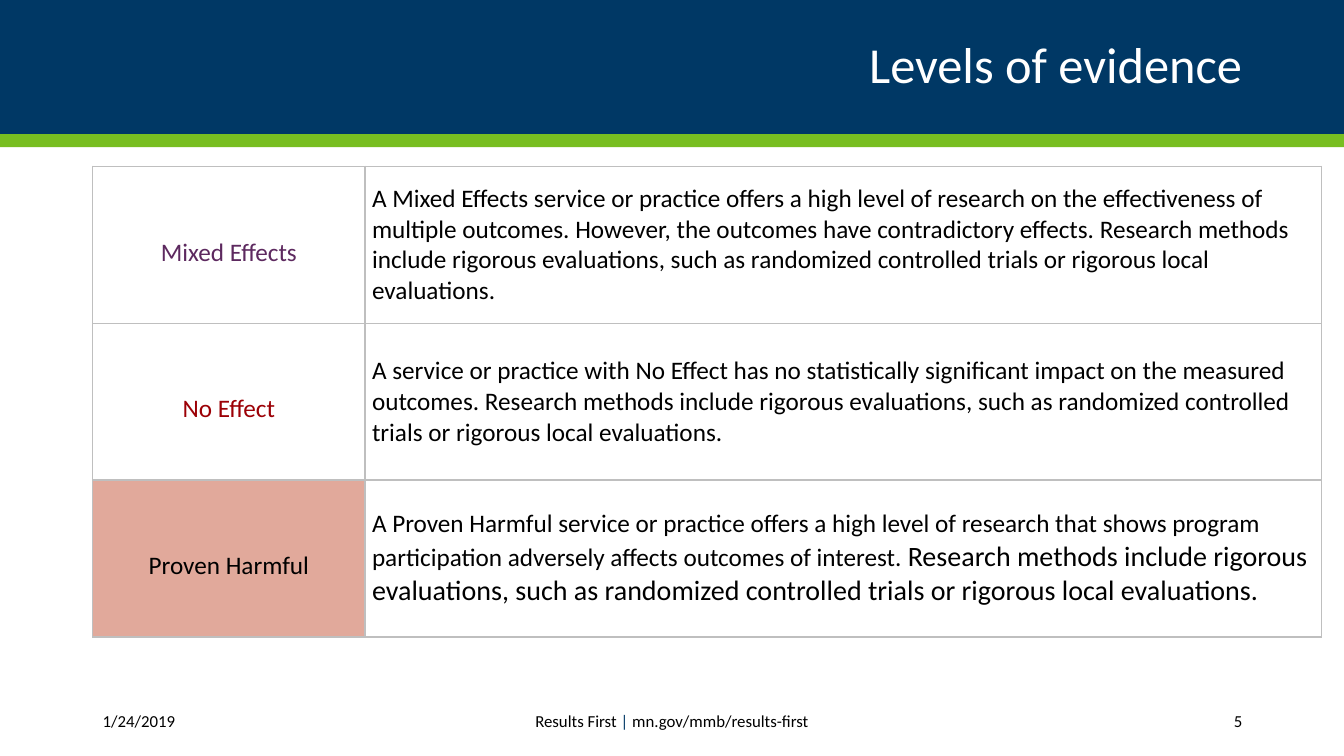
from pptx import Presentation
from pptx.dml.color import RGBColor
from pptx.enum.shapes import MSO_SHAPE
from pptx.enum.text import MSO_ANCHOR, PP_ALIGN
from pptx.oxml import parse_xml
from pptx.oxml.ns import nsdecls
from pptx.util import Inches, Pt

RECT = MSO_SHAPE.RECTANGLE
MIDDLE = MSO_ANCHOR.MIDDLE
LEFT, CENTER, RIGHT = PP_ALIGN.LEFT, PP_ALIGN.CENTER, PP_ALIGN.RIGHT
TITLE_ONLY = 5
FONT = "Calibri"
BLUE, GREEN, GRAY = "003865", "78BE21", "BFBFBF"
BLACK, WHITE = "000000", "FFFFFF"
WIDTH, HEIGHT = 13.33, 7.5
MARGIN = 0.92

LEVELS = [
    ("Mixed Effects", "5D295F", None, [
        ("A Mixed Effects service or practice offers a high level of research on the "
         "effectiveness of multiple outcomes. However, the outcomes have contradictory "
         "effects. Research methods include rigorous evaluations, such as randomized "
         "controlled trials or rigorous local evaluations.", 18, BLACK)]),
    ("No Effect", "9C0006", None, [
        ("A service or practice with No Effect has no statistically significant impact on "
         "the measured outcomes. Research methods include rigorous evaluations, such as "
         "randomized controlled trials or rigorous local evaluations.", 18, BLACK)]),
    ("Proven Harmful", BLACK, "E1A99B", [
        ("A Proven Harmful service or practice offers a high level of research that shows "
         "program participation adversely affects outcomes of interest. ", 18, BLACK),
        ("Research methods include rigorous evaluations, such as randomized controlled "
         "trials or rigorous local evaluations.", 20, BLACK)]),
]


def color(code):
    return RGBColor.from_string(code)


def style(item, values):
    for name, value in values.items():
        setattr(item, name, value)


def write(frame, runs, align, spacing=1.0):
    """Fill the first paragraph with (text, size, colour) runs."""
    para = frame.paragraphs[0]
    style(para, {"alignment": align, "line_spacing": spacing})
    for text, size, code in runs:
        run = para.add_run()
        run.text = text
        style(run.font, {"name": FONT, "size": Pt(size)})
        run.font.color.rgb = color(code)


def place(shape, box):
    names = ("left", "top", "width", "height")
    style(shape, dict(zip(names, map(Inches, box))))


def header(slide, box):
    left, top, width, height = box
    title = slide.shapes.title
    strip = 0.13
    for y, tall, code in ((top, height - strip, BLUE),
                          (top + height - strip, strip, GREEN)):
        bar = slide.shapes.add_shape(RECT, *map(Inches, (left, y, width, tall)))
        bar.shadow.inherit = False
        bar.fill.solid()
        bar.fill.fore_color.rgb = color(code)
        bar.line.fill.background()
        title.element.addprevious(bar.element)
    place(title, (left + MARGIN, top + 0.17, 11.5, 1))
    style(title.text_frame, {"vertical_anchor": MIDDLE, "word_wrap": True})
    write(title.text_frame, [("Levels of evidence", 36, WHITE)], RIGHT, 0.9)


def border(cell):
    props = cell._tc.get_or_add_tcPr()
    for side in "LRTB":
        props.append(parse_xml(
            f'<a:ln{side} {nsdecls("a")} w="{Pt(1)}"><a:solidFill>'
            f'<a:srgbClr val="{GRAY}"/></a:solidFill></a:ln{side}>'))


def fill_cell(cell, runs, align, spacing, fill):
    side = Inches(0.07)
    style(cell, {"vertical_anchor": MIDDLE, "margin_left": side, "margin_right": side,
                 "margin_top": 0, "margin_bottom": 0})
    border(cell)
    if fill:
        cell.fill.solid()
        cell.fill.fore_color.rgb = color(fill)
    else:
        cell.fill.background()
    write(cell.text_frame, runs, align, spacing)


def levels(slide, box):
    width, height = box[2:]
    grid = slide.shapes.add_table(len(LEVELS), 2, *map(Inches, box)).table
    style(grid, {"first_row": False, "horz_banding": False})
    label = 2.7
    for col, wide in zip(grid.columns, (label, width - label)):
        col.width = Inches(wide)
    for row, (name, code, fill, runs) in zip(grid.rows, LEVELS):
        row.height = Inches(height / len(LEVELS))
        fill_cell(row.cells[0], [(name, 18, code)], CENTER, 1.5, fill)
        fill_cell(row.cells[1], runs, LEFT, 1.0, None)


def footer(slide, box):
    left, top, width, height = box
    parts = [
        (0, 1.49, LEFT, [("1/24/2019", 12, BLACK)]),
        (2.69, 6.11, CENTER, [("Results First ", 12, BLACK), ("|", 12, BLUE),
                              (" mn.gov/mmb/results-first", 12, BLACK)]),
        (width - 1.6, 1.6, RIGHT, [("5", 12, BLACK)]),
    ]
    for x, wide, align, runs in parts:
        note = slide.shapes.add_textbox(*map(Inches, (left + x, top, wide, height)))
        style(note.text_frame, {"word_wrap": True, "vertical_anchor": MIDDLE})
        write(note.text_frame, runs, align)


def main():
    deck = Presentation()
    style(deck, {"slide_width": Inches(WIDTH), "slide_height": Inches(HEIGHT)})
    slide = deck.slides.add_slide(deck.slide_layouts[TITLE_ONLY])
    header(slide, (0, 0, WIDTH, 1.46))
    levels(slide, (MARGIN, 1.65, 12.19, 4.67))
    footer(slide, (MARGIN, 6.95, 11.5, 0.4))
    deck.save("out.pptx")


if __name__ == "__main__":
    main()
